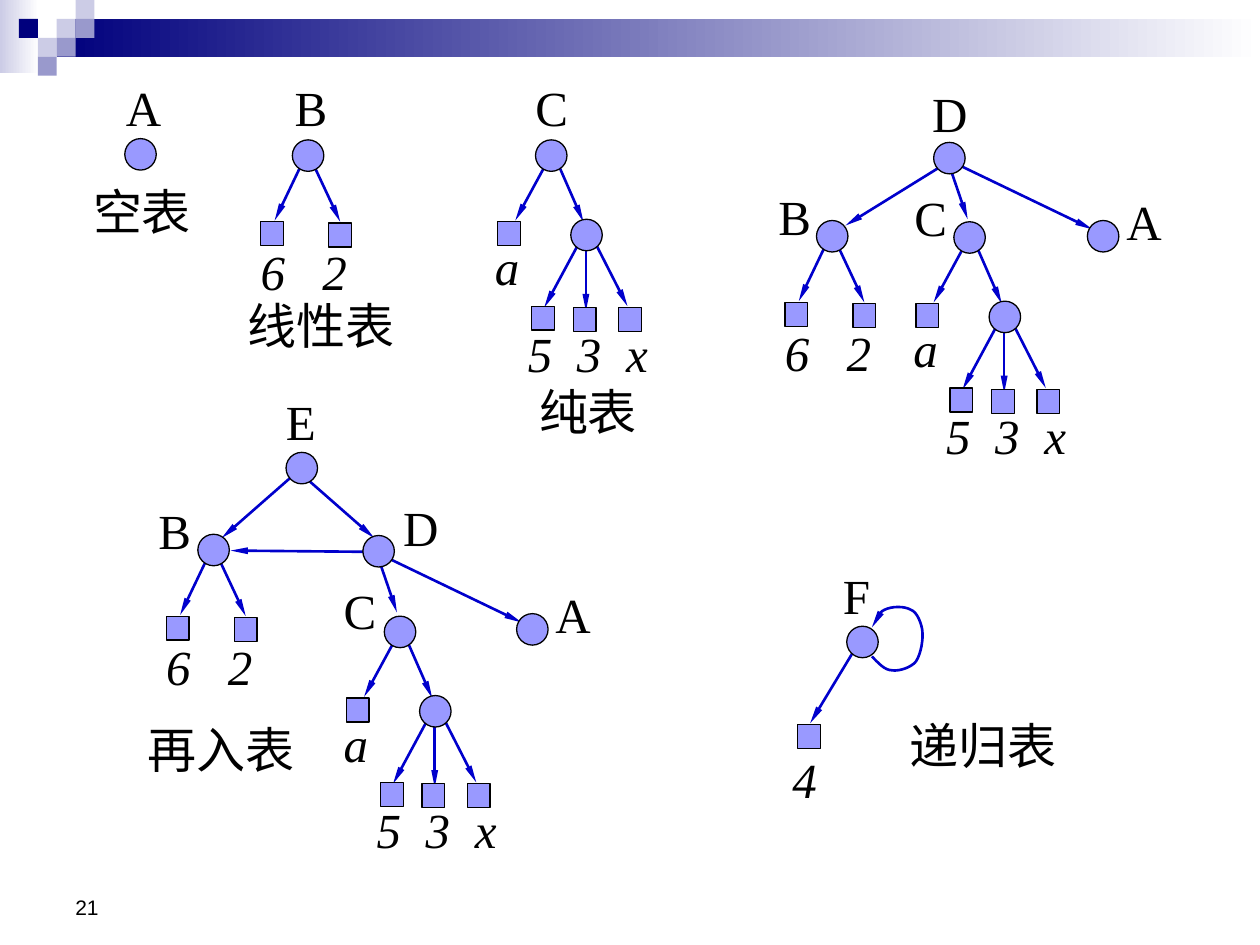
import pptx
import pptx.dml.color
import pptx.enum.shapes
import pptx.enum.text
import pptx.oxml
import pptx.oxml.ns
import pptx.util

PX = 9144  # 100 px to the inch

THEME = {
    "navy": "00007D", "mist": "CCCCE6", "slate": "9999CC", "white": "FFFFFF",
    "node": "9999FF", "edge": "0000CC", "ink": "000000",
    "label": {"name": "Times New Roman", "size": pptx.util.Pt(28)},
    "number": {"name": "Arial", "size": pptx.util.Pt(12)},
    "outline": pptx.util.Pt(0.75), "arrow": pptx.util.Pt(1.5),
}
RECTANGLE = pptx.enum.shapes.MSO_SHAPE.RECTANGLE
OVAL = pptx.enum.shapes.MSO_SHAPE.OVAL


def color(name):
    return pptx.dml.color.RGBColor.from_string(THEME[name])


def style_arrow(shape):
    """Colour the line and give its end a slim triangle."""
    shape.line.color.rgb = color("edge")
    shape.line.width = THEME["arrow"]
    head = pptx.oxml.parse_xml(
        f'<a:tailEnd {pptx.oxml.ns.nsdecls("a")} type="triangle" w="sm" len="lg"/>')
    shape.line._get_or_add_ln().append(head)


presentation = pptx.Presentation()
presentation.slide_width = 1000 * PX
presentation.slide_height = 750 * PX
slide = presentation.slides.add_slide(presentation.slide_layouts[6])
shapes = slide.shapes

# Header band: two gradients, then a mosaic of small tiles
for left, top, width, height, start in [(0, 0, 31, 58, "mist"), (45, 15, 955, 30, "navy")]:
    band = shapes.add_shape(RECTANGLE, left * PX, top * PX, width * PX, height * PX)
    band.shadow.inherit = False
    band.line.fill.background()
    band.fill.gradient()
    band.fill.gradient_angle = 0
    for stop, name in zip(band.fill.gradient_stops, (start, "white")):
        stop.color.rgb = color(name)

TILE = 15
for column, row, name in [(3, 1, "mist"), (4, 0, "mist"), (4, 1, "slate"), (2, 2, "mist"),
                          (1, 1, "navy"), (3, 2, "slate"), (2, 3, "slate")]:
    tile = shapes.add_shape(RECTANGLE, column * TILE * PX, row * TILE * PX, TILE * PX, TILE * PX)
    tile.shadow.inherit = False
    tile.line.fill.background()
    tile.fill.solid()
    tile.fill.fore_color.rgb = color(name)

# Each tree is laid out relative to the top left corner of its root circle
TREES = {
    "single": {"circles": [(0, 0)]},
    "linear": {
        "circles": [(0, 0)],
        "arrows": [(16, 18, 38, 65), (8, 18, -14, 64)],
        "squares": [(-25, 65), (29, 66)],
        "labels": [("6\t2", -35, 76)],
    },
    "pure": {
        "circles": [(0, 0), (28, 63)],
        "arrows": [(17, 17, 38, 65), (9, 18, -16, 64), (40, 73, 40, 136),
                   (47, 81, 73, 132), (35, 81, 7, 133)],
        "squares": [(-30, 65), (-3, 132), (30, 133), (66, 133)],
        "labels": [("a", -42, 72), ("5\t3\tx", -16, 141)],
    },
    "shared": {
        "circles": [(0, 0), (122, 62)],
        "arrows": [(20, 18, 126, 69), (13, 20, 27, 61)],
        "labels": [("C", -25, 31), ("A", 143, 34)],
    },
    "recursive": {
        "circles": [(0, 0)],
        "arrows": [(6, 19, -29, 77)],
        "squares": [(-39, 78)],
        "labels": [("4", -53, 93)],
    },
}
PLACEMENTS = [
    ("single", 99, 110), ("linear", 232, 111), ("pure", 425, 111),
    ("shared", 741, 113), ("linear", 648, 175), ("pure", 757, 176),
    ("single", 227, 359), ("shared", 288, 425), ("linear", 157, 424), ("pure", 305, 489),
    ("recursive", 672, 497),
]
arrows = [(747, 132, 671, 179), (240, 377, 297, 427), (233, 377, 176, 427), (295, 438, 183, 437)]
labels = [
    ("A", 90, 57), ("B", 224, 57), ("C", 415, 57), ("D", 730, 61), ("B", 608, 143),
    ("E", 217, 306), ("B", 116, 392), ("D", 310, 390), ("F", 659, 444),
    ("空表", 64, 139), ("线性表", 187, 230), ("再入表", 107, 566),
    ("纯表", 418, 298), ("递归表", 712, 563),
]
nodes = []
for name, x, y in PLACEMENTS:
    tree = TREES[name]
    arrows += [(x + a, y + b, x + c, y + d) for a, b, c, d in tree.get("arrows", [])]
    nodes += [(OVAL, x + dx, y + dy, 25, 25) for dx, dy in tree["circles"]]
    nodes += [(RECTANGLE, x + dx, y + dy, 18, 19) for dx, dy in tree.get("squares", [])]
    labels += [(text, x + dx, y + dy) for text, dx, dy in tree.get("labels", [])]

for ends in arrows:
    connector = shapes.add_connector(
        pptx.enum.shapes.MSO_CONNECTOR.STRAIGHT, *[value * PX for value in ends])
    style_arrow(connector)
    connector._element.spPr.append(
        pptx.oxml.parse_xml(f'<a:effectLst {pptx.oxml.ns.nsdecls("a")}/>'))

# Loop from F back to itself, traced along cubic curves
LOOP_START = (692, 521)
LOOP_CURVES = [
    ((697, 526), (702, 532), (708, 532)), ((713, 533), (723, 530), (727, 525)),
    ((731, 519), (733, 507), (732, 500)), ((731, 494), (728, 486), (723, 484)),
    ((718, 481), (708, 481), (702, 484)), ((697, 486), (694, 495), (692, 498)),
]
STEPS = 8
points = []
start = LOOP_START
for first, second, end in LOOP_CURVES:
    for step in range(1, STEPS + 1):
        t = step / STEPS
        points.append(tuple(
            PX * ((1 - t) ** 3 * p + 3 * (1 - t) ** 2 * t * q + 3 * (1 - t) * t ** 2 * r + t ** 3 * s)
            for p, q, r, s in zip(start, first, second, end)))
    start = end
builder = shapes.build_freeform(LOOP_START[0] * PX, LOOP_START[1] * PX)
builder.add_line_segments(points, close=False)
loop = builder.convert_to_shape()
loop.shadow.inherit = False
loop.fill.background()
style_arrow(loop)

for kind, left, top, width, height in nodes:
    node = shapes.add_shape(kind, left * PX, top * PX, width * PX, height * PX)
    node.shadow.inherit = False
    node.fill.solid()
    node.fill.fore_color.rgb = color("node")
    node.line.color.rgb = color("ink")
    node.line.width = THEME["outline"]

LABEL_WIDTHS = {"A": 48, "B": 46, "C": 46, "D": 48, "E": 44, "F": 42, "a": 40, "4": 40,
                "6\t2": 89, "5\t3\tx": 118}
TAB_STEPS = {"6\t2": 49, "5\t3\tx": 39}
LEAF_LABELS = {"a", "4", *TAB_STEPS}
for text, left, top in labels:
    width = LABEL_WIDTHS.get(text, 20 + 39 * len(text))
    box = shapes.add_textbox(left * PX, top * PX, width * PX, 57 * PX)
    box.text_frame.word_wrap = False
    paragraph = box.text_frame.paragraphs[0]
    run = paragraph.add_run()
    run.text = text
    for attribute, value in {**THEME["label"], "italic": text in LEAF_LABELS}.items():
        setattr(run.font, attribute, value)
    run.font.color.rgb = color("ink")
    if text in TAB_STEPS:
        stops = "".join(f'<a:tab pos="{TAB_STEPS[text] * index * PX}" algn="l"/>'
                        for index in range(1, text.count("\t") + 1))
        paragraph._p.get_or_add_pPr().append(pptx.oxml.parse_xml(
            f'<a:tabLst {pptx.oxml.ns.nsdecls("a")}>{stops}</a:tabLst>'))

number = shapes.add_textbox(50 * PX, 683 * PX, 233 * PX, 52 * PX)
number.text_frame.word_wrap = True
number.text_frame.vertical_anchor = pptx.enum.text.MSO_ANCHOR.BOTTOM
run = number.text_frame.paragraphs[0].add_run()
run.text = "21"
for attribute, value in THEME["number"].items():
    setattr(run.font, attribute, value)
run.font.color.rgb = color("ink")

presentation.save("out.pptx")
